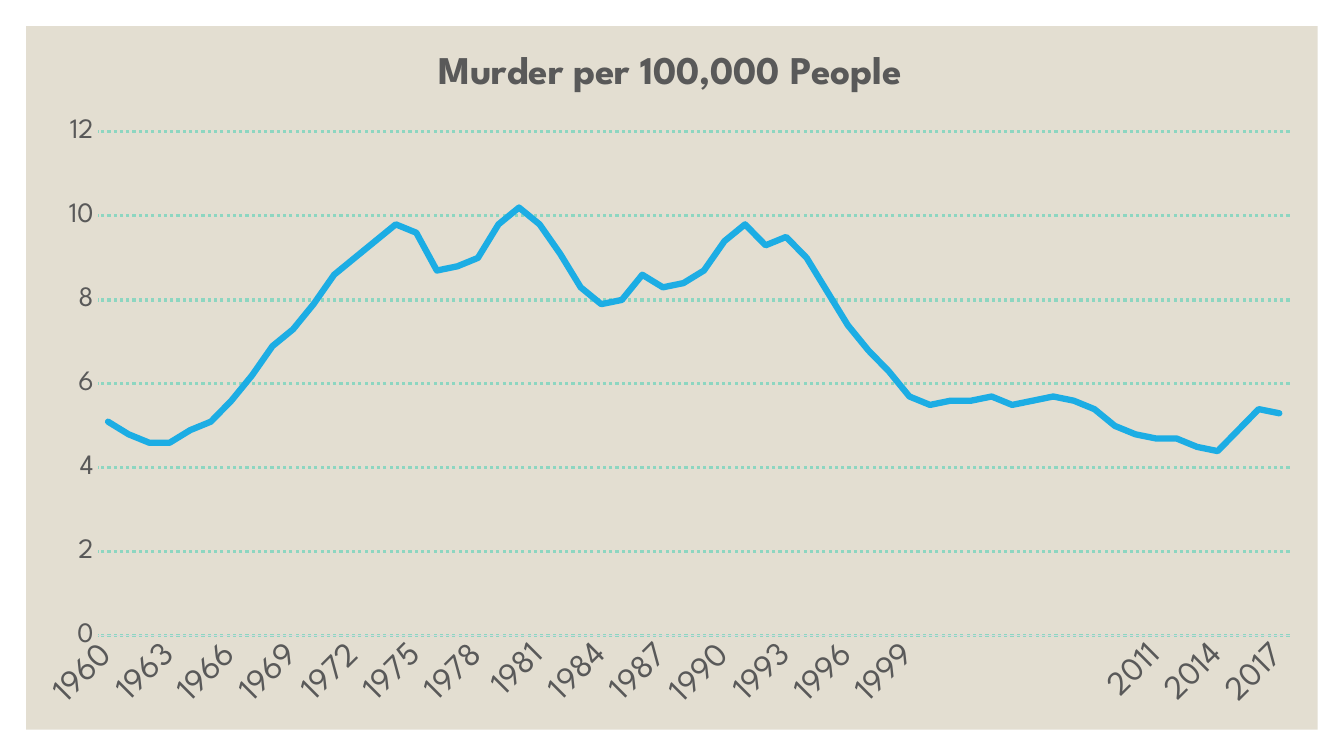
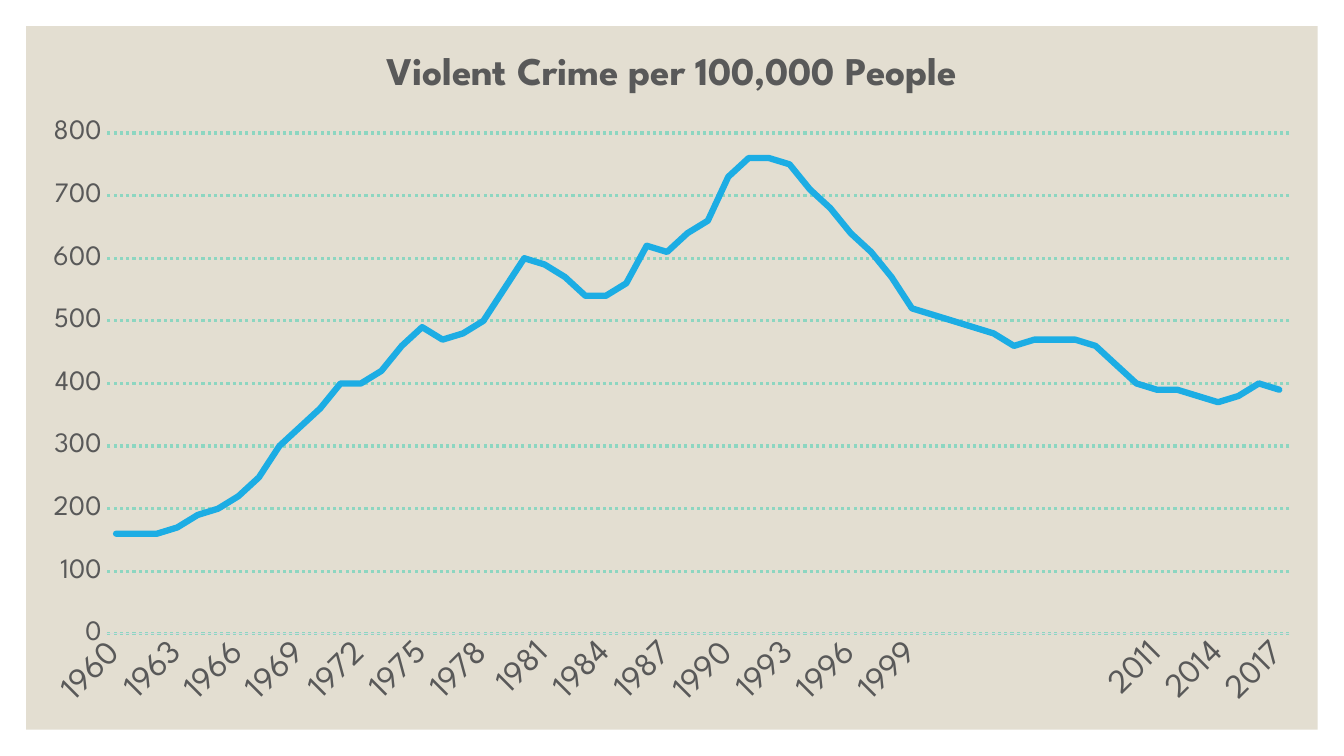
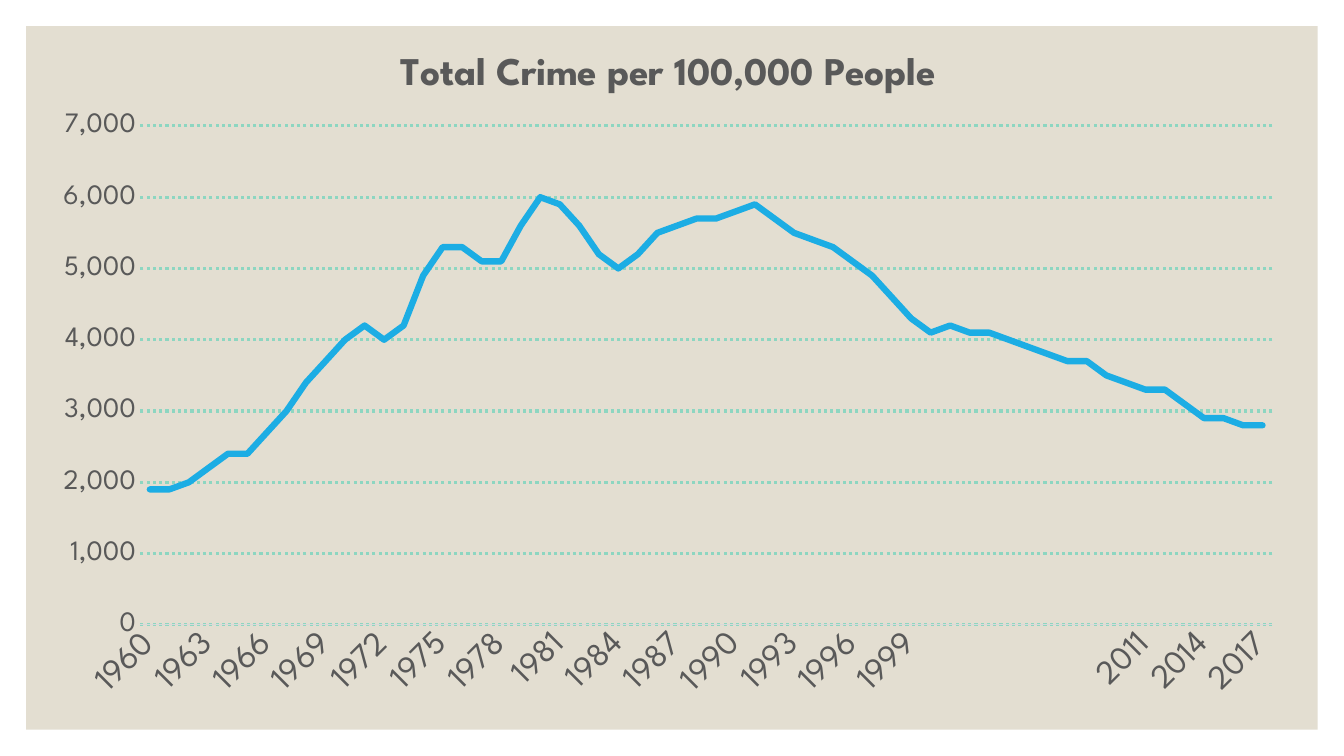
from pptx import Presentation
from pptx.chart.data import CategoryChartData
from pptx.dml.color import RGBColor
from pptx.enum.chart import XL_CHART_TYPE as ChartType, XL_TICK_MARK as TickMark
from pptx.enum.dml import MSO_LINE as LineDash
from pptx.enum.shapes import MSO_SHAPE as ShapeKind
from pptx.oxml import parse_xml
from pptx.oxml.ns import nsdecls, qn
from pptx.util import Inches, Pt

FONT = "League Spartan"
GRAY, PALE_GRAY, SAND, MINT, BLUE = "595959", "D9D9D9", "E3DED1", "8DD6C1", "1CADE4"
WIDTH, HEIGHT, MARGIN = 13.33, 7.5, 0.26
YEARS = [str(year) for year in range(1960, 2018)]

CHARTS = [
    {
        "title": "Murder per 100,000 People",
        "title_at": (4.28, 0.45),
        "frame": (0.25, 0.26, 12.79, 6.97),
        "plot": (0.97, 1.31, 11.82, 5.0),
        "scale": (12, 2, "General"),
        "values": [
            5.1, 4.8, 4.6, 4.6, 4.9, 5.1, 5.6, 6.2, 6.9, 7.3,
            7.9, 8.6, 9, 9.4, 9.8, 9.6, 8.7, 8.8, 9, 9.8,
            10.2, 9.8, 9.1, 8.3, 7.9, 8, 8.6, 8.3, 8.4, 8.7,
            9.4, 9.8, 9.3, 9.5, 9, 8.2, 7.4, 6.8, 6.3, 5.7,
            5.5, 5.6, 5.6, 5.7, 5.5, 5.6, 5.7, 5.6, 5.4, 5,
            4.8, 4.7, 4.7, 4.5, 4.4, 4.9, 5.4, 5.3,
        ],
    },
    {
        "title": "Violent Crime per 100,000 People",
        "title_at": (3.76, 0.46),
        "frame": (0.28, 0.27, 12.75, 6.93),
        "plot": (1.05, 1.32, 11.74, 4.97),
        "scale": (800, 100, "General"),
        "values": [
            160, 160, 160, 170, 190, 200, 220, 250, 300, 330,
            360, 400, 400, 420, 460, 490, 470, 480, 500, 550,
            600, 590, 570, 540, 540, 560, 620, 610, 640, 660,
            730, 760, 760, 750, 710, 680, 640, 610, 570, 520,
            510, 500, 490, 480, 460, 470, 470, 470, 460, 430,
            400, 390, 390, 380, 370, 380, 400, 390,
        ],
    },
    {
        "title": "Total Crime per 100,000 People",
        "title_at": (3.9, 0.46),
        "frame": (0.38, 0.34, 12.51, 6.78),
        "plot": (1.39, 1.25, 11.23, 4.95),
        "scale": (7000, 1000, "#,##0"),
        "values": [
            1900, 1900, 2000, 2200, 2400, 2400, 2700, 3000, 3400, 3700,
            4000, 4200, 4000, 4200, 4900, 5300, 5300, 5100, 5100, 5600,
            6000, 5900, 5600, 5200, 5000, 5200, 5500, 5600, 5700, 5700,
            5800, 5900, 5700, 5500, 5400, 5300, 5100, 4900, 4600, 4300,
            4100, 4200, 4100, 4100, 4000, 3900, 3800, 3700, 3700, 3500,
            3400, 3300, 3300, 3100, 2900, 2900, 2800, 2800,
        ],
    },
]


def color(hex_string):
    return RGBColor.from_string(hex_string)


def style_font(font, size, bold=False):
    font.name, font.size, font.bold = FONT, Pt(size), bold
    font.color.rgb = color(GRAY)


def style_line(line, hex_string, width):
    line.color.rgb = color(hex_string)
    line.width = Pt(width)


def add_panel_to_master(presentation, slide):
    panel = slide.shapes.add_shape(
        ShapeKind.RECTANGLE, Inches(MARGIN), Inches(MARGIN),
        Inches(WIDTH - 2 * MARGIN), Inches(HEIGHT - 2 * MARGIN))
    panel.shadow.inherit = False
    panel.fill.solid()
    panel.fill.fore_color.rgb = color(SAND)
    panel.line.fill.background()
    presentation.slide_master.element.cSld.spTree.insert(2, panel.element)


def place(parent, index, frame, area, inner=False):
    left, top, width, height = frame
    shares = [("x", (area[0] - left) / width), ("y", (area[1] - top) / height)]
    if len(area) == 4:
        shares += [("w", area[2] / width), ("h", area[3] / height)]
    target = '<c:layoutTarget val="inner"/>' if inner else ""
    modes = '<c:xMode val="edge"/><c:yMode val="edge"/>'
    values = "".join(f'<c:{name} val="{share:.4f}"/>' for name, share in shares)
    layout = parse_xml(f'<c:layout {nsdecls("c")}><c:manualLayout>'
                       f'{target}{modes}{values}</c:manualLayout></c:layout>')
    present = parent.find(qn("c:layout"))
    if present is not None:
        parent.remove(present)
    parent.insert(index, layout)


def style_axes(chart, scale):
    years, rates = chart.category_axis, chart.value_axis
    for axis, size in ((years, 24), (rates, 20)):
        axis.major_tick_mark = axis.minor_tick_mark = TickMark.NONE
        style_font(axis.tick_labels.font, size)
    style_line(years.format.line, PALE_GRAY, 0.75)
    chart.element.xpath(".//c:catAx/c:txPr/a:bodyPr")[0].set("rot", "-2700000")
    rates.format.line.fill.background()
    rates.minimum_scale = 0
    rates.maximum_scale, rates.major_unit, number_format = scale
    rates.tick_labels.number_format = number_format
    rates.tick_labels.number_format_is_linked = False
    grid = rates.major_gridlines.format.line
    style_line(grid, MINT, 2.25)
    grid.dash_style = LineDash.ROUND_DOT


def add_line_chart(slide, content):
    data = CategoryChartData()
    data.categories = YEARS
    data.add_series("Series 1", content["values"])
    frame = content["frame"]
    chart = slide.shapes.add_chart(
        ChartType.LINE, *(Inches(length) for length in frame), data).chart
    chart.font.name, chart.font.size = FONT, Pt(10)
    chart.has_legend = False
    chart.plots[0].vary_by_categories = False

    title = chart.chart_title.text_frame
    title.text = content["title"]
    style_font(title.paragraphs[0].runs[0].font, 28, True)
    style_axes(chart, content["scale"])

    series = chart.plots[0].series[0]
    series.smooth = False
    style_line(series.format.line, BLUE, 4.5)
    outline = chart.element.xpath(".//c:ser/c:spPr/a:ln")[0]
    outline.set("cap", "rnd")
    outline.append(parse_xml(f'<a:round {nsdecls("a")}/>'))

    place(chart.element.xpath("./c:chart/c:title")[0], 1, frame, content["title_at"])
    place(chart.element.xpath("./c:chart/c:plotArea")[0], 0, frame, content["plot"], True)


def main():
    presentation = Presentation()
    presentation.slide_width, presentation.slide_height = Inches(WIDTH), Inches(HEIGHT)
    blank = presentation.slide_layouts[6]
    slides = [presentation.slides.add_slide(blank) for _ in CHARTS]
    add_panel_to_master(presentation, slides[0])
    for slide, content in zip(slides, CHARTS):
        add_line_chart(slide, content)
    presentation.save("out.pptx")


if __name__ == "__main__":
    main()
